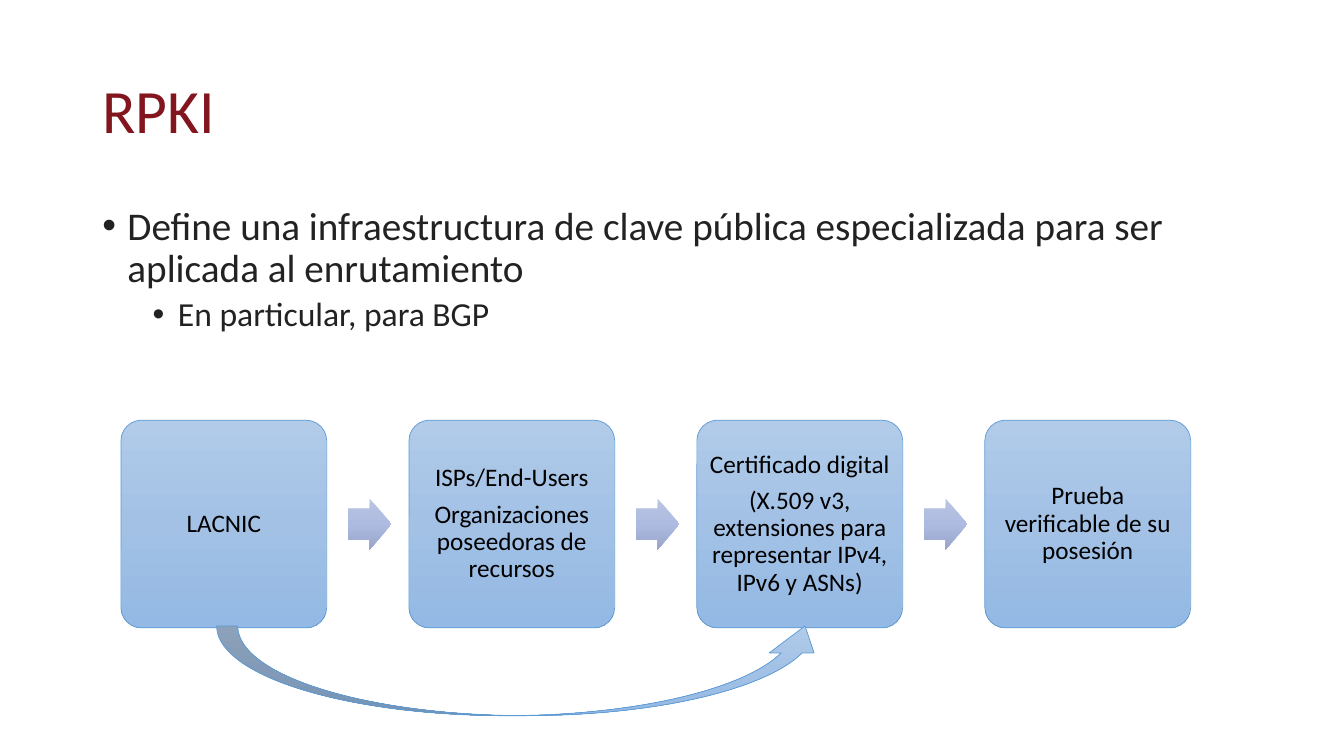
from copy import deepcopy

from pptx import Presentation
from pptx import util as u
from pptx.dml.color import RGBColor
from pptx.enum import shapes, text
from pptx.oxml import parse_xml
from pptx.oxml.ns import nsdecls, qn

Pt = u.Pt
FORM = shapes.MSO_SHAPE
FONT = "Calibri"
BLUE = ["B1CBE9", "A3C1E5", "93B9E4"]
LILAC = ["BBC5E3", "AEBBE0", "98A4CB"]
EDGE = "5B9BD5"

STEPS = [
    ["LACNIC"],
    ["ISPs/End-Users", "Organizaciones poseedoras de recursos"],
    ["Certificado digital",
     "(X.509 v3, extensiones para representar IPv4, IPv6 y ASNs)"],
    ["Prueba verificable de su posesión"],
]
# Text, size, left indent, space before
POINTS = [
    ("Define una infraestructura de clave pública especializada "
     "para ser aplicada al enrutamiento", 28, 18, 0),
    ("En particular, para BGP", 24, 54, 5),
]


def color(code):
    return RGBColor.from_string(code)


def style(para, size, code, gap=0):
    para.line_spacing = 0.9
    para.space_before = Pt(gap)
    for run in para.runs:
        run.font.name = FONT
        run.font.size = Pt(size)
        run.font.color.rgb = color(code)


def bullet(para, left):
    props = para._p.get_or_add_pPr()
    props.set("marL", str(Pt(left)))
    props.set("indent", str(Pt(-18)))
    props.append(parse_xml(f'<a:buFont {nsdecls("a")} typeface="Arial"/>'))
    props.append(parse_xml(f'<a:buChar {nsdecls("a")} char="•"/>'))


def add_box(slide, area, lines):
    box = slide.shapes.add_textbox(*map(Pt, area))
    frame = box.text_frame
    frame.word_wrap = True
    frame.text = "\n".join(lines)
    return frame


def add_form(slide, kind, area, tones, adjust, edge=None):
    form = slide.shapes.add_shape(kind, *map(Pt, area))
    form.shadow.inherit = False
    for i, value in enumerate(adjust):
        form.adjustments[i] = value
    # Three-stop gradient, running from top to bottom
    form.fill.gradient()
    form.fill.gradient_angle = 270
    stops = form._element.spPr.find(".//" + qn("a:gsLst"))
    stops.insert(1, deepcopy(stops[0]))
    for i, stop in enumerate(form.fill.gradient_stops):
        stop.position = i / 2
        stop.color.rgb = color(tones[i])
    if edge:
        form.line.color.rgb = color(edge)
        form.line.width = Pt(0.5)
    else:
        form.line.fill.background()
    return form


def add_card(slide, left, lines):
    area = (left, 300.2, 147, 148.3)
    card = add_form(slide, FORM.ROUNDED_RECTANGLE, area, BLUE, [0.1], EDGE)
    frame = card.text_frame
    frame.word_wrap = True
    frame.vertical_anchor = text.MSO_ANCHOR.MIDDLE
    frame.margin_left = frame.margin_right = Pt(5)
    frame.margin_top = frame.margin_bottom = Pt(5)
    frame.text = "\n".join(lines)
    for i, para in enumerate(frame.paragraphs):
        para.alignment = text.PP_ALIGN.CENTER
        style(para, 18, "000000", 6.3 if i else 0)


def main():
    deck = Presentation()
    deck.slide_width, deck.slide_height = Pt(960), Pt(540)
    slide = deck.slides.add_slide(deck.slide_layouts[6])

    # Title
    title = add_box(slide, (66, 28.75, 828, 104.4), ["RPKI"])
    title.vertical_anchor = text.MSO_ANCHOR.MIDDLE
    style(title.paragraphs[0], 44, "82151E")

    # Bullets
    body = add_box(slide, (66, 143.75, 828, 342.6), [p[0] for p in POINTS])
    for para, (_, size, left, gap) in zip(body.paragraphs, POINTS):
        bullet(para, left)
        style(para, size, "222222", gap)

    # Chain of cards joined by arrows
    for i, lines in enumerate(STEPS):
        left = 86.4 + i * 205.7
        if i:
            area = (left - 43.7, 356.1, 31.2, 36.5)
            add_form(slide, FORM.RIGHT_ARROW, area, LILAC, [0.6, 0.5])
        add_card(slide, left, lines)

    # Curved arrow from the first card to the third
    add_form(slide, FORM.CURVED_UP_ARROW, (154.8, 447.1, 436.3, 64.1),
             BLUE, [0.235, 0.5, 0.301], EDGE)

    deck.save("out.pptx")


if __name__ == "__main__":
    main()
